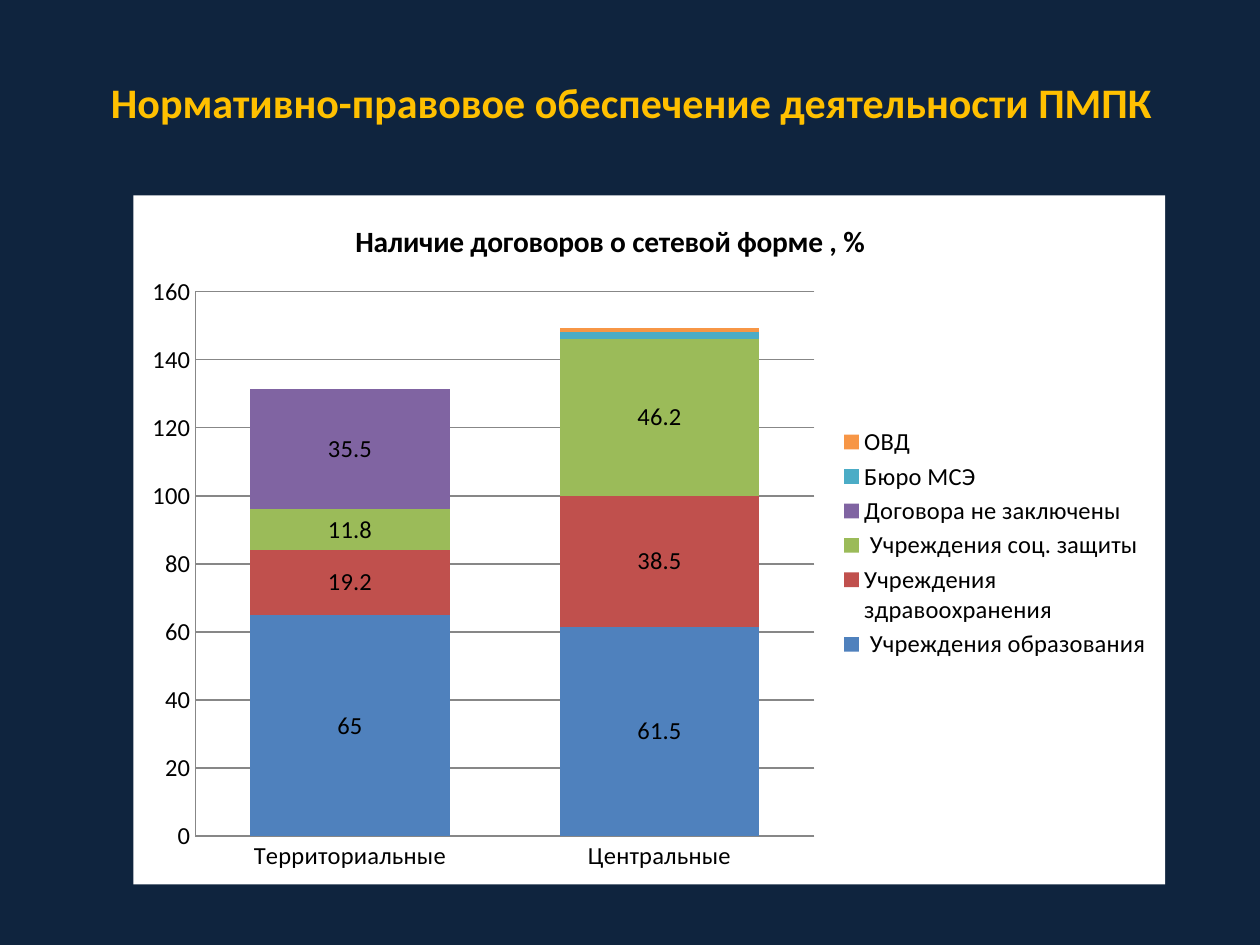
import pptx
import pptx.chart.data
import pptx.dml.color
import pptx.enum.chart
import pptx.enum.text
import pptx.oxml
import pptx.oxml.ns
import pptx.util

Cm, Pt = pptx.util.Cm, pptx.util.Pt
qn = pptx.oxml.ns.qn
rgb = pptx.dml.color.RGBColor.from_string

# Content
TITLE = "Нормативно-правовое обеспечение деятельности ПМПК"
CHART_TITLE = "Наличие договоров о сетевой форме , %"
CATEGORIES = ["Территориальные", "Центральные"]
SERIES = [  # name, values, colour, labelled
    (" Учреждения образования", (65, 61.5), "4F81BD", True),
    ("Учреждения здравоохранения", (19.2, 38.5), "C0504D", True),
    (" Учреждения соц. защиты ", (11.8, 46.2), "9BBB59", True),
    ("Договора не заключены", (35.5, 0), "8064A2", True),
    ("Бюро МСЭ", (0, 2), "4BACC6", False),
    ("ОВД", (0, 1), "F79646", False),
]
THEME = {
    "font": "Calibri", "back": "0F243E", "title": "FFC000", "panel": "FFFFFF",
    "text": "000000", "grid": "878787",
    "title_size": 24, "chart_title_size": 16.8, "chart_size": 14,
}
TITLE_BOX = (1.3, 0.74, 22.86, 2.62)
CHART_BOX = (2.69, 3.94, 20.8, 13.89)


def style(font, size, color, bold=False):
    font.name, font.size, font.bold = THEME["font"], Pt(THEME[size]), bold
    font.color.rgb = rgb(THEME[color])


def chart_xml(body):
    return pptx.oxml.parse_xml(body.replace(
        ">", f" {pptx.oxml.ns.nsdecls('c', 'a')}>", 1))


def place(element, index, inner=False, **fractions):
    """Fix a chart part at fractions of the chart frame."""
    for old in element.findall(qn("c:layout")):
        element.remove(old)
    target = '<c:layoutTarget val="inner"/>' if inner else ""
    modes = "".join(f'<c:{k}Mode val="edge"/>' for k in "xy")
    sizes = "".join(f'<c:{k} val="{v}"/>' for k, v in fractions.items())
    element.insert(index, chart_xml(
        f"<c:layout><c:manualLayout>{target}{modes}{sizes}"
        "</c:manualLayout></c:layout>"))


# Slide
prs = pptx.Presentation()
prs.slide_width, prs.slide_height = Cm(25.4), Cm(19.05)
s = prs.slides.add_slide(prs.slide_layouts[5])
s.background.fill.solid()
s.background.fill.fore_color.rgb = rgb(THEME["back"])

# Title
sp = s.shapes.title
sp.left, sp.top, sp.width, sp.height = map(Cm, TITLE_BOX)
tf = sp.text_frame
tf.text = TITLE
tf.vertical_anchor = pptx.enum.text.MSO_ANCHOR.MIDDLE
p = tf.paragraphs[0]
p.alignment = pptx.enum.text.PP_ALIGN.CENTER
style(p.runs[0].font, "title_size", "title", bold=True)

# Chart
data = pptx.chart.data.CategoryChartData()
data.categories = CATEGORIES
for name, values, _, _ in SERIES:
    data.add_series(name, values)
chart = s.shapes.add_chart(
    pptx.enum.chart.XL_CHART_TYPE.COLUMN_STACKED, *map(Cm, CHART_BOX), data).chart
style(chart.font, "chart_size", "text")
chart_part = chart.element.find(qn("c:chart"))
chart_part.addnext(chart_xml(
    f'<c:spPr><a:solidFill><a:srgbClr val="{THEME["panel"]}"/></a:solidFill>'
    "<a:ln><a:noFill/></a:ln></c:spPr>"))

# Chart title and legend
chart.has_title = True
tf = chart.chart_title.text_frame
tf.text = CHART_TITLE
style(tf.paragraphs[0].runs[0].font, "chart_title_size", "text", bold=True)
chart.has_legend = True
chart.legend.position = pptx.enum.chart.XL_LEGEND_POSITION.RIGHT
chart.legend.include_in_layout = False

# Positions inside the chart
place(chart_part.find(qn("c:title")), 1, x=0.21, y=0.03)
place(chart_part.find(qn("c:legend")), 1, x=0.68, y=0.33, w=0.31, h=0.35)
place(chart_part.find(qn("c:plotArea")), 0, inner=True,
      x=0.06, y=0.14, w=0.6, h=0.79)

# Axes
for axis in (chart.category_axis, chart.value_axis):
    axis.major_tick_mark = pptx.enum.chart.XL_TICK_MARK.NONE
    axis.format.line.color.rgb = rgb(THEME["grid"])
value_axis = chart.value_axis
value_axis.minimum_scale, value_axis.maximum_scale = 0, 160
value_axis.major_unit = 20
value_axis.major_gridlines.format.line.color.rgb = rgb(THEME["grid"])

# Series, with no label on empty segments
plot = chart.plots[0]
plot.gap_width, plot.overlap, plot.vary_by_categories = 55, 100, False
for series, (_, values, color, labelled) in zip(plot.series, SERIES):
    series.format.fill.solid()
    series.format.fill.fore_color.rgb = rgb(color)
    if not labelled:
        continue
    labels = series.data_labels
    labels.show_value = True
    for i, value in enumerate(values):
        if value == 0:
            labels._element.insert(0, chart_xml(
                f'<c:dLbl><c:idx val="{i}"/><c:delete val="1"/></c:dLbl>'))

prs.save("out.pptx")
